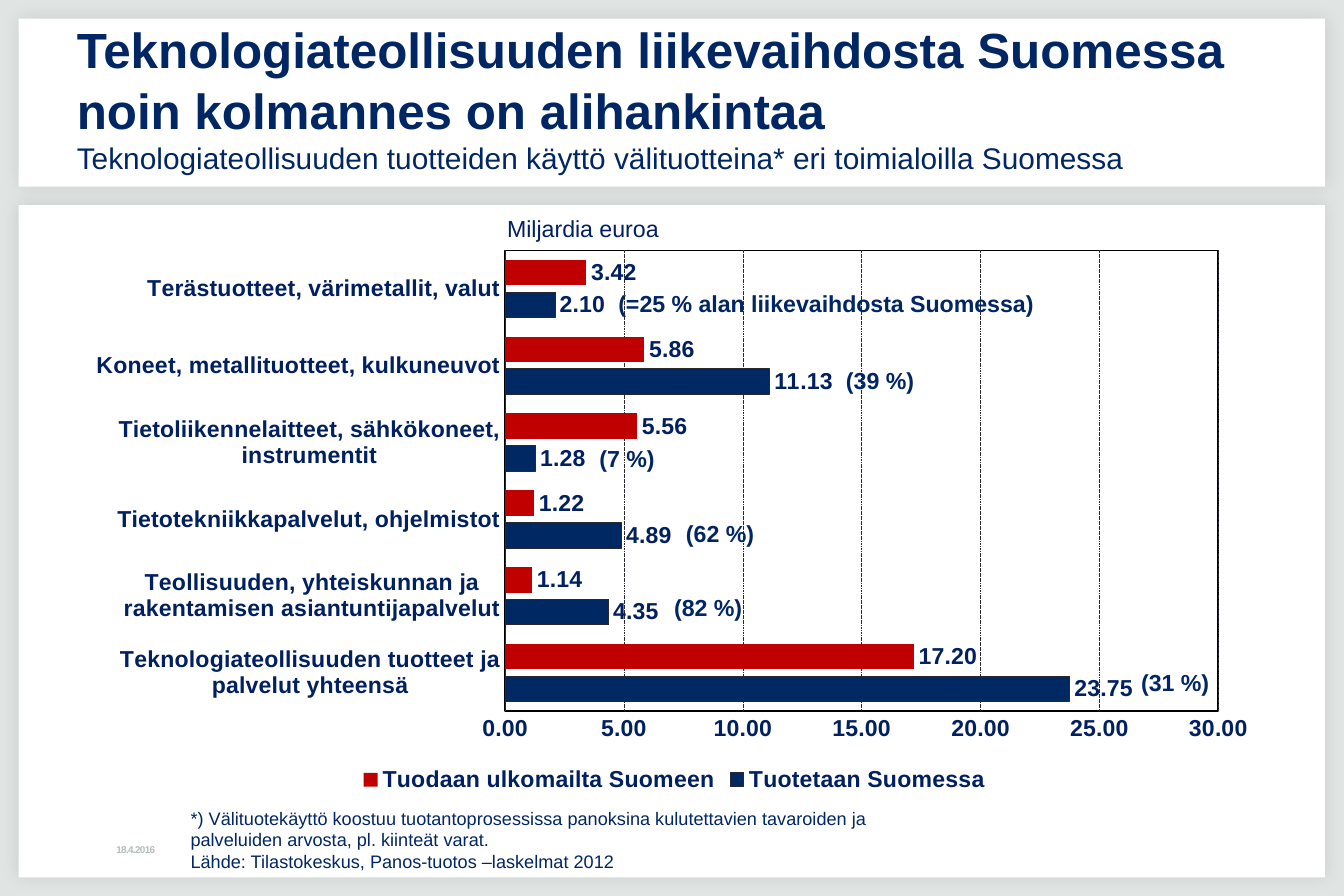
"""Builds a slide on subcontracting in the Finnish technology industry."""
from lxml import etree
from pptx import Presentation
from pptx.chart.data import CategoryChartData
from pptx.dml.color import RGBColor
from pptx.enum.chart import XL_CHART_TYPE, XL_LABEL_POSITION, XL_LEGEND_POSITION, XL_TICK_MARK
from pptx.enum.dml import MSO_LINE
from pptx.enum.shapes import MSO_SHAPE
from pptx.enum.text import MSO_ANCHOR
from pptx.oxml import parse_xml
from pptx.oxml.ns import nsdecls, qn
from pptx.util import Pt

RECTANGLE = MSO_SHAPE.RECTANGLE
TOP, MIDDLE = MSO_ANCHOR.TOP, MSO_ANCHOR.MIDDLE
BAR_CLUSTERED = XL_CHART_TYPE.BAR_CLUSTERED
OUTSIDE_END = XL_LABEL_POSITION.OUTSIDE_END
LEGEND_BOTTOM = XL_LEGEND_POSITION.BOTTOM
NO_TICK = XL_TICK_MARK.NONE
DOTTED = MSO_LINE.SQUARE_DOT

BACKGROUND = RGBColor(0xE0, 0xE5, 0xE3)
WHITE = RGBColor(0xFF, 0xFF, 0xFF)
GREY = RGBColor(0xB1, 0xBE, 0xB9)
NAVY = RGBColor(0x00, 0x26, 0x64)
CHART_NAVY = RGBColor(0x00, 0x20, 0x60)
BAR_NAVY = RGBColor(0x00, 0x29, 0x64)
RED = RGBColor(0xC0, 0x00, 0x00)
DARK = RGBColor(0x29, 0x28, 0x2E)
BLACK = RGBColor(0x00, 0x00, 0x00)

CATEGORIES = [
    "Teknologiateollisuuden tuotteet ja palvelut yhteensä",
    "Teollisuuden, yhteiskunnan ja rakentamisen asiantuntijapalvelut",
    "Tietotekniikkapalvelut, ohjelmistot",
    "Tietoliikennelaitteet, sähkökoneet, instrumentit",
    "Koneet, metallituotteet, kulkuneuvot",
    "Terästuotteet, värimetallit, valut",
]
DOMESTIC = [23.75, 4.35, 4.89, 1.28, 11.13, 2.1]
IMPORTED = [17.2, 1.14, 1.22, 5.56, 5.86, 3.42]
SHARES = [
    ("(=25 % alan liikevaihdosta Suomessa)", 368.6, 172.1, 277),
    ("(39 %)", 506.9, 218.9, 60.5),
    ("(7 %)", 357.1, 266.4, 52.6),
    ("(62 %)", 409.7, 311.8, 60.5),
    ("(82 %)", 402.5, 357.1, 60.5),
    ("(31 %)", 686.2, 402.5, 60.5),
]


class SlideBuilder:
    """Holds the font and the slide, and adds each kind of element."""

    def __init__(self, slide, font="Arial"):
        self.slide = slide
        self.font = font
        fill = slide.background.fill
        fill.solid()
        fill.fore_color.rgb = BACKGROUND

    def card(self, left, top, width, height):
        """Add a white panel with a soft shadow."""
        panel = self.slide.shapes.add_shape(
            RECTANGLE, Pt(left), Pt(top), Pt(width), Pt(height))
        panel.shadow.inherit = False
        panel.fill.solid()
        panel.fill.fore_color.rgb = WHITE
        panel.line.fill.background()
        effects = panel._element.spPr.find(qn("a:effectLst"))
        effects.append(parse_xml(
            f'<a:outerShdw {nsdecls("a")} blurRad="{Pt(10)}" dist="0" dir="2700000">'
            '<a:srgbClr val="000000"><a:alpha val="10000"/></a:srgbClr></a:outerShdw>'))

    def text(self, box, lines, color=NAVY, anchor=TOP, wrap=True, inset=(7.2, 3.6)):
        """Add a text box; each line is (words, size, bold)."""
        frame = self.slide.shapes.add_textbox(*map(Pt, box)).text_frame
        frame.word_wrap = wrap
        frame.vertical_anchor = anchor
        frame.margin_left = frame.margin_right = Pt(inset[0])
        frame.margin_top = frame.margin_bottom = Pt(inset[1])
        for index, (words, size, bold) in enumerate(lines):
            paragraph = frame.add_paragraph() if index else frame.paragraphs[0]
            paragraph.text = words
            self.style(paragraph.font, size, bold, color)
        return frame

    def style(self, font, size, bold, color):
        """Apply the slide's typeface with a size, weight and colour."""
        font.name = self.font
        font.size = Pt(size)
        font.bold = bold
        font.color.rgb = color

    def bar_chart(self, box, categories, series, plot):
        """Add a clustered bar chart; each series is (name, values, fill, outline)."""
        data = CategoryChartData(number_format="0.00")
        data.categories = categories
        for name, values, _, _ in series:
            data.add_series(name, values)
        chart = self.slide.shapes.add_chart(BAR_CLUSTERED, *map(Pt, box), data).chart
        self.style(chart.font, 14, True, CHART_NAVY)
        chart.has_title = False
        chart.has_legend = True
        chart.legend.position = LEGEND_BOTTOM
        chart.legend.include_in_layout = False
        bars = chart.plots[0]
        bars.gap_width, bars.overlap, bars.vary_by_categories = 75, -25, False
        for bar, (_, _, color, outline) in zip(bars.series, series):
            bar.format.fill.solid()
            bar.format.fill.fore_color.rgb = color
            if outline:
                self.thin_line(bar.format.line)
            labels = bar.data_labels
            labels.show_value = True
            labels.position = OUTSIDE_END
            labels.number_format = "0.00"
            labels.number_format_is_linked = False
        self.axes(chart)
        self.plot_area(chart, plot)

    def thin_line(self, line):
        """Make a line dark and hairline thin."""
        line.color.rgb = DARK
        line.width = Pt(0.25)

    def axes(self, chart):
        """Style both axes and the gridlines."""
        for axis in (chart.category_axis, chart.value_axis):
            axis.major_tick_mark = axis.minor_tick_mark = NO_TICK
        self.thin_line(chart.category_axis.format.line)
        value = chart.value_axis
        value.minimum_scale, value.maximum_scale, value.major_unit = 0, 30, 5
        value.format.line.fill.background()
        value.tick_labels.number_format = "0.00"
        value.tick_labels.number_format_is_linked = False
        value.has_major_gridlines = True
        self.thin_line(value.major_gridlines.format.line)
        value.major_gridlines.format.line.dash_style = DOTTED

    def plot_area(self, chart, plot):
        """Fix the inner plot area and frame it."""
        area = chart._chartSpace.chart.plotArea
        for old in area.findall(qn("c:layout")):
            area.remove(old)
        layout = parse_xml(f'<c:layout {nsdecls("c")}><c:manualLayout/></c:layout>')
        area.insert(0, layout)
        settings = [("layoutTarget", "inner"), ("xMode", "edge"), ("yMode", "edge")]
        for tag, value in settings + list(zip("xywh", plot)):
            etree.SubElement(layout[0], qn(f"c:{tag}")).set("val", str(value))
        area.append(parse_xml(
            f'<c:spPr {nsdecls("c", "a")}><a:noFill/><a:ln w="{Pt(1)}"><a:solidFill>'
            f'<a:srgbClr val="{BLACK}"/></a:solidFill></a:ln></c:spPr>'))


def main():
    """Build and save the slide."""
    deck = Presentation()
    deck.slide_width, deck.slide_height = Pt(816.5), Pt(544.3)
    page = SlideBuilder(deck.slides.add_slide(deck.slide_layouts[6]))

    page.card(11.4, 11.4, 793.6, 102)
    page.card(11.4, 124.6, 793.6, 408.4)
    date = page.text((67.7, 510.5, 102.2, 11.5), [("18.4.2016", 6, True)],
                     GREY, MIDDLE, inset=(3, 3))
    date.paragraphs[0].runs[0].font._element.set("spc", "-40")
    page.bar_chart(
        (42.5, 134.6, 734.4, 349.9), CATEGORIES,
        [("Tuotetaan Suomessa", DOMESTIC, BAR_NAVY, True),
         ("Tuodaan ulkomailta Suomeen", IMPORTED, RED, False)],
        (0.36, 0.05, 0.59, 0.8))
    title = page.text((39.6, 28.1, 737.3, 60.5), [
        ("Teknologiateollisuuden liikevaihdosta Suomessa noin kolmannes on alihankintaa",
         30, True),
        ("Teknologiateollisuuden tuotteiden käyttö välituotteina* eri toimialoilla Suomessa",
         18.1, False)], anchor=MIDDLE)
    title.paragraphs[0].line_spacing = 1.04
    page.text((108.7, 486.7, 444.2, 46.8), [
        ("*) Välituotekäyttö koostuu tuotantoprosessissa panoksina kulutettavien tavaroiden "
         "ja palveluiden arvosta, pl. kiinteät varat.", 11, False),
        ("Lähde: Tilastokeskus, Panos-tuotos –laskelmat 2012", 11, False)])
    for share, left, top, width in SHARES:
        page.text((left, top, width, 24.5), [(share, 14.1, True)], wrap=False)
    page.text((301, 126.7, 111.6, 24.5), [("Miljardia euroa", 14.1, False)],
              CHART_NAVY, wrap=False)
    deck.save("out.pptx")


if __name__ == "__main__":
    main()
